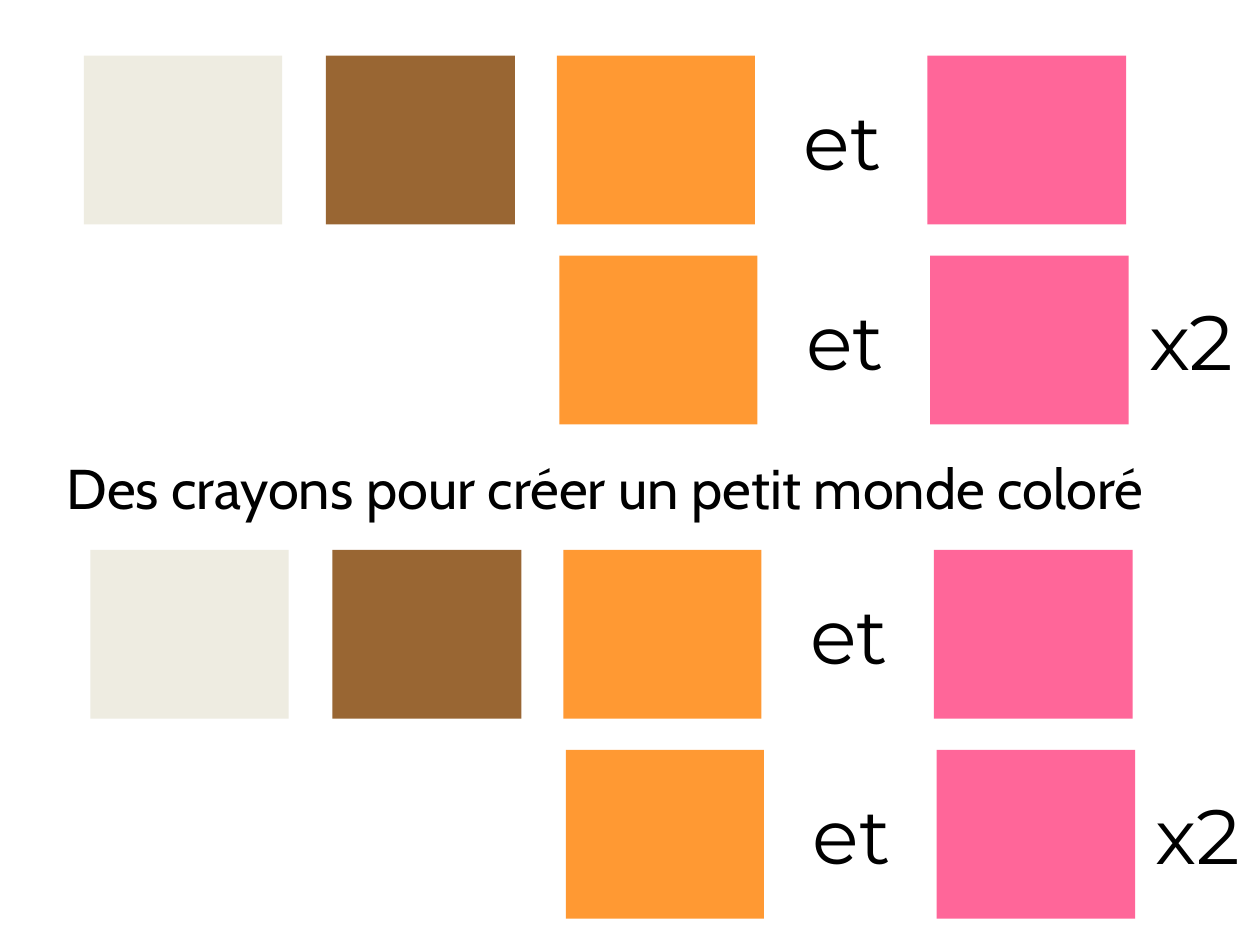
from typing import NamedTuple

from pptx import Presentation
from pptx.dml.color import RGBColor
from pptx.enum import shapes, text
from pptx.util import Pt

BLACK = RGBColor(0x00, 0x00, 0x00)
CREAM = RGBColor(0xEE, 0xEC, 0xE1)
BROWN = RGBColor(0x99, 0x66, 0x33)
ORANGE = RGBColor(0xFF, 0x99, 0x33)
PINK = RGBColor(0xFF, 0x66, 0x99)


class Swatch(NamedTuple):
    left: float
    width: float
    color: RGBColor


class Word(NamedTuple):
    left: float
    label: str


PAIR = [Swatch(318.2, 113.2, ORANGE), Swatch(530, 113.5, PINK)]
FULL = [Swatch(48, 113.2, CREAM), Swatch(186.3, 108, BROWN)] + PAIR
AND = Word(427.5, "et")
TWICE = Word(625.3, "x2")

ROW_TOP = 31.8
ROW_STEP = (1.5, 114.3)
VERSE_STEP = (3.7, 282.4)


def add_text(slide, left: float, top: float, width: float, height: float,
             words: str, font: str, size: float, align: text.PP_ALIGN) -> None:
    box = slide.shapes.add_textbox(Pt(left), Pt(top), Pt(width), Pt(height))
    frame = box.text_frame
    frame.word_wrap = True
    frame.auto_size = text.MSO_AUTO_SIZE.SHAPE_TO_FIT_TEXT
    para = frame.paragraphs[0]
    para.alignment = align
    run = para.add_run()
    run.text = words
    run.font.name = font
    run.font.size = Pt(size)
    run.font.color.rgb = BLACK


def add_row(slide, dx: float, top: float, colors: list[Swatch],
            words: list[Word]) -> None:
    """Draw one line of crayons, shifted right by dx."""
    for item in colors:
        box = slide.shapes.add_shape(
            shapes.MSO_SHAPE.RECTANGLE, Pt(item.left + dx), Pt(top),
            Pt(item.width), Pt(96.5))
        box.shadow.inherit = False
        box.fill.solid()
        box.fill.fore_color.rgb = item.color
        box.line.fill.background()
    for word in words:
        add_text(slide, word.left + dx, top + 17.9, 108, 60.6,
                 word.label, "Montserrat", 44, text.PP_ALIGN.CENTER)


def add_verse(slide, dx: float, top: float) -> None:
    """Draw a full row, then the pair that is sung twice."""
    add_row(slide, dx, top, FULL, [AND])
    add_row(slide, dx + ROW_STEP[0], top + ROW_STEP[1], PAIR, [AND, TWICE])


def main() -> None:
    deck = Presentation()
    deck.slide_width, deck.slide_height = Pt(720), Pt(540)
    slide = deck.slides.add_slide(deck.slide_layouts[6])
    add_verse(slide, 0, ROW_TOP)
    add_text(slide, 31, 255.6, 635, 46,
             "Des crayons pour créer un petit monde coloré",
             "Cabin", 32, text.PP_ALIGN.LEFT)
    add_verse(slide, VERSE_STEP[0], ROW_TOP + VERSE_STEP[1])
    deck.save("out.pptx")


if __name__ == "__main__":
    main()
